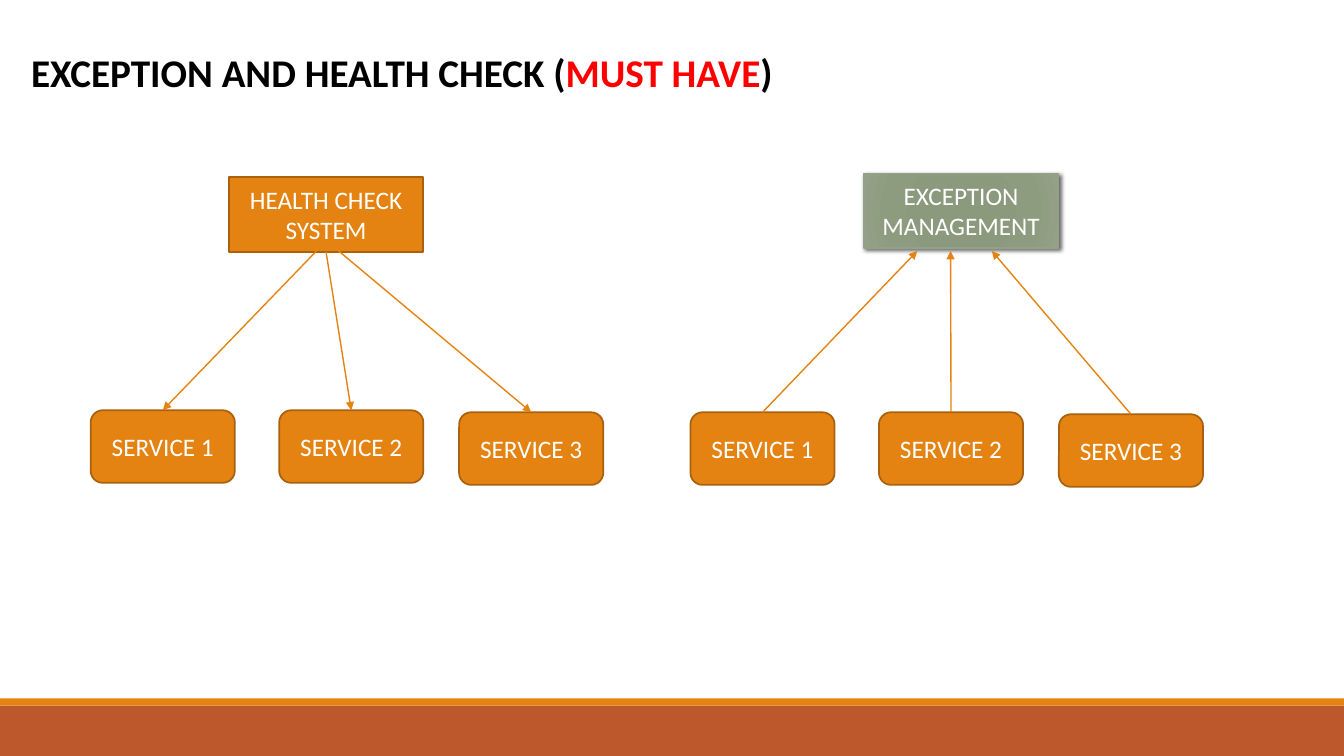
from dataclasses import dataclass
from typing import Any

from lxml.etree import SubElement
from pptx import Presentation
from pptx.dml.color import RGBColor
from pptx.enum.shapes import MSO_CONNECTOR, MSO_SHAPE
from pptx.enum.text import MSO_ANCHOR, MSO_AUTO_SIZE, PP_ALIGN
from pptx.oxml import parse_xml
from pptx.oxml.ns import nsdecls, qn
from pptx.util import Emu, Inches, Pt


@dataclass(frozen=True)
class Theme:
    font: str = "Calibri"
    title: float = 28
    label: float = 18
    edge: float = 1.25
    thin: float = 1
    black: str = "000000"
    white: str = "FFFFFF"
    red: str = "FF0000"
    orange: str = "E48312"
    brown: str = "A9610D"
    rust: str = "BD582C"
    sage: str = "94A088"
    fade: tuple = ((0, "8A987B"), (34, "8B997D"), (70, "8D9C7E"), (100, "94A187"))


@dataclass(frozen=True)
class Box:
    col: float
    row: float
    cols: float
    rows: float
    fill: str
    text: str = ""
    line: str = ""
    edge: float = 1.25
    kind: Any = MSO_SHAPE.RECTANGLE


@dataclass(frozen=True)
class Group:
    head: Box
    left: float      # first service, in columns
    top: float       # first service, in rows
    ends: tuple      # arrow columns at the head
    inward: bool     # arrows point to the head
    glow: bool       # fade and shadow on the head


THEME = Theme()
# The grid has ten cells to the inch
CELL = Inches(0.1)
WIDE, HIGH = 133.33, 75
STEPS = ((0, 0), (18.7, 0), (36.55, 0.2))
FOOT = 24.9  # row where arrows meet the head

BANDS = (
    Box(0, 70, WIDE, 5, THEME.rust),
    Box(0, 69.3, WIDE, 0.7, THEME.orange),
)
GROUPS = (
    Group(Box(22.7, 17.6, 19.3, 7.4, THEME.orange, "HEALTH CHECK SYSTEM", THEME.brown),
          9, 40.7, (31.4, 32.3, 33.6), False, False),
    Group(Box(85.7, 17.2, 19.3, 7.4, THEME.sage, "EXCEPTION MANAGEMENT",
              THEME.sage, THEME.thin),
          68.5, 40.9, (91, 94.3, 98.4), True, True),
)
TITLE = (("EXCEPTION AND HEALTH CHECK (", THEME.black),
         ("MUST HAVE", THEME.red), (")", THEME.black))


def span(cells: float) -> Emu:
    return Emu(round(cells * CELL))


def apply(target: Any, style: dict) -> None:
    for name, value in style.items():
        setattr(target, name, value)


def write(par: Any, text: str, size: float, tint: str, bold: bool = False) -> None:
    run = par.add_run()
    run.text = text
    apply(run.font, {"name": THEME.font, "size": Pt(size), "bold": bold})
    run.font.color.rgb = RGBColor.from_string(tint)


def draw_box(slide: Any, box: Box) -> Any:
    shape = slide.shapes.add_shape(
        box.kind, *map(span, (box.col, box.row, box.cols, box.rows)))
    shape.shadow.inherit = False
    shape.fill.solid()
    shape.fill.fore_color.rgb = RGBColor.from_string(box.fill)
    if box.line:
        shape.line.color.rgb = RGBColor.from_string(box.line)
        shape.line.width = Pt(box.edge)
    else:
        shape.line.fill.background()
    if box.text:
        frame = shape.text_frame
        apply(frame, {"word_wrap": True, "vertical_anchor": MSO_ANCHOR.MIDDLE})
        frame.paragraphs[0].alignment = PP_ALIGN.CENTER
        write(frame.paragraphs[0], box.text, THEME.label, THEME.white)
    return shape


def add_glow(shape: Any) -> None:
    # Round fade in place of the flat fill
    props = shape.element.spPr
    stops = "".join(f'<a:gs pos="{pos * 1000}"><a:srgbClr val="{tint}"/></a:gs>'
                    for pos, tint in THEME.fade)
    fade = parse_xml(
        f'<a:gradFill {nsdecls("a")} rotWithShape="1"><a:gsLst>{stops}</a:gsLst>'
        '<a:path path="circle"><a:fillToRect l="100000" t="100000" r="100000" '
        'b="100000"/></a:path></a:gradFill>')
    props.replace(props.find(qn("a:solidFill")), fade)
    # Soft shadow down and to the right
    props.find(qn("a:effectLst")).append(parse_xml(
        f'<a:outerShdw {nsdecls("a")} blurRad="{Pt(3)}" dist="{Pt(2)}" '
        f'dir="{45 * 60000}" rotWithShape="0"><a:srgbClr val="{THEME.black}">'
        '<a:alpha val="60000"/></a:srgbClr></a:outerShdw>'))


def draw_arrow(slide: Any, head: Any, node: Any, end: float, inward: bool) -> None:
    near = (span(end), span(FOOT))
    far = (node.left + node.width // 2, node.top)
    start, stop = (far, near) if inward else (near, far)
    link = slide.shapes.add_connector(MSO_CONNECTOR.STRAIGHT, *start, *stop)
    if inward:
        link.begin_connect(node, 0)
    else:
        link.end_connect(node, 0)
        mid = head.left + head.width // 2
        if abs(near[0] - mid) < CELL // 2:
            link.begin_connect(head, 2)
    link.line.color.rgb = RGBColor.from_string(THEME.orange)
    link.line.width = Pt(THEME.thin)
    SubElement(link.line._get_or_add_ln(), qn("a:tailEnd"), type="triangle")
    SubElement(link._element.spPr, qn("a:effectLst"))


def draw_group(slide: Any, group: Group) -> None:
    head = draw_box(slide, group.head)
    if group.glow:
        add_glow(head)
    for count, ((right, down), end) in enumerate(zip(STEPS, group.ends), 1):
        node = draw_box(slide, Box(
            group.left + right, group.top + down, 14.3, 7.2, THEME.orange,
            f"SERVICE {count}", THEME.brown, THEME.edge, MSO_SHAPE.ROUNDED_RECTANGLE))
        draw_arrow(slide, head, node, end, group.inward)


def draw_title(slide: Any) -> None:
    frame = slide.shapes.add_textbox(*map(span, (2.1, 4.3, 76.4, 5.7))).text_frame
    apply(frame, {"word_wrap": False, "auto_size": MSO_AUTO_SIZE.SHAPE_TO_FIT_TEXT})
    for text, tint in TITLE:
        write(frame.paragraphs[0], text, THEME.title, tint, True)


def main() -> None:
    deck = Presentation()
    apply(deck, {"slide_width": span(WIDE), "slide_height": span(HIGH)})
    slide = deck.slides.add_slide(deck.slide_layouts[6])
    # Footer bands
    for band in BANDS:
        draw_box(slide, band)
    # Title and the two diagrams
    draw_title(slide)
    for group in GROUPS:
        draw_group(slide, group)
    deck.save("out.pptx")


if __name__ == "__main__":
    main()
